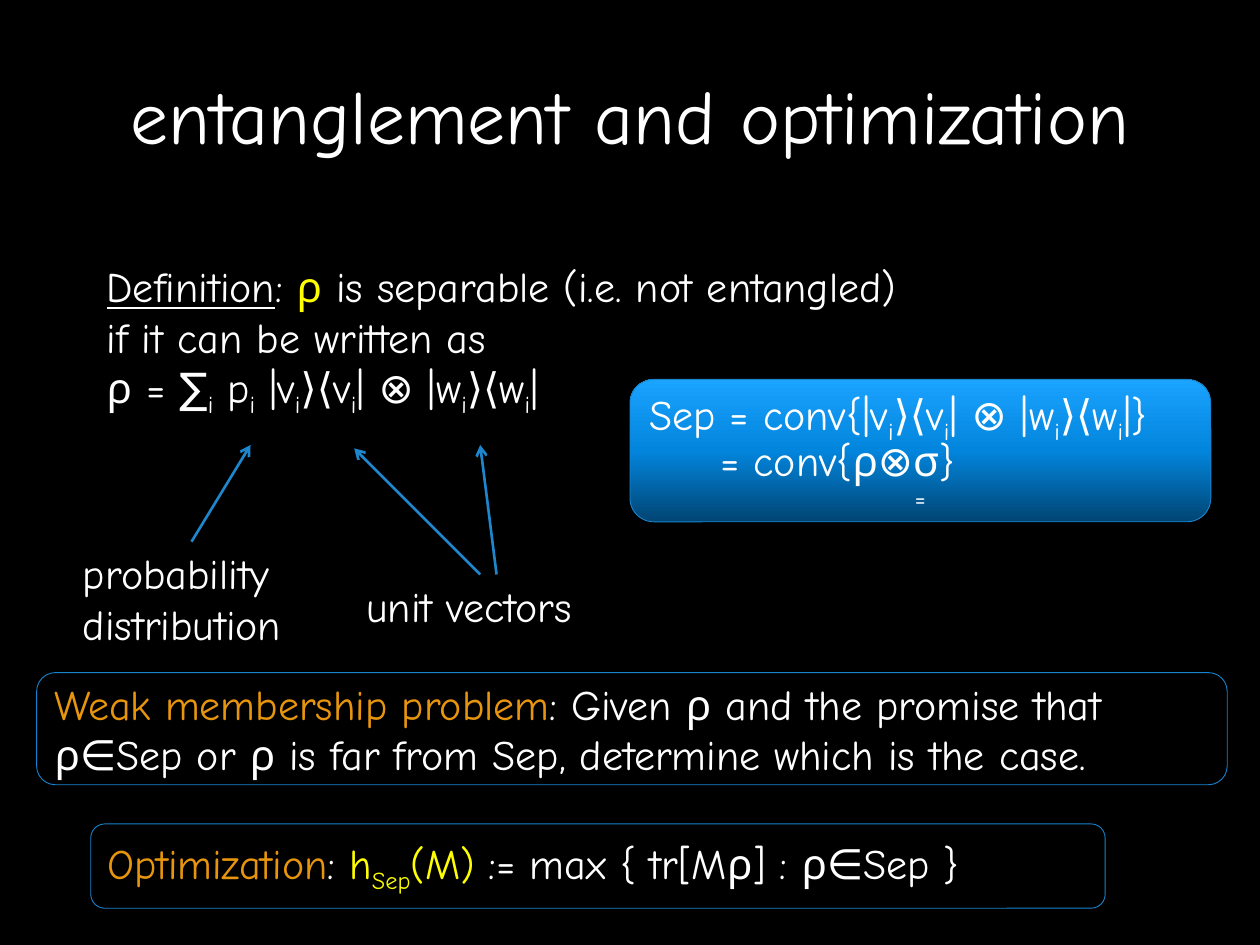
from lxml import etree
from pptx import Presentation, util as u
from pptx.dml.color import RGBColor
from pptx.enum import shapes, text
from pptx.oxml.ns import qn

THEME = {
    "font": "Comic Neue", "title": 43.2, "body": 24, "small": 14,
    "white": "FFFFFF", "yellow": "FFFF00", "orange": "E8950E",
    "background": "000000", "border": "1884CD", "arrow": "1D86CD",
    "gradient": [(0, "014573"), (50, "0285DD"), (100, "1AA3FF")],
}

# Paragraphs are lists of (words, style); ~ switches subscript on and off.
TITLE = "entanglement and optimization"
STATES = "|v~i~⟩⟨v~i~| ⊗ |w~i~⟩⟨w~i~|"
DEFINITION = [
    [("Definition", "underlined"), (": ", "white"), ("ρ", "yellow"),
     (" is separable (i.e. not entangled)", "white")],
    [("if it can be written as", "white")],
    [("ρ = ∑~i~ p~i~ " + STATES, "white")],
]
LABELS = [  # left, top, width, height in cm
    ((1.42, 10.92, 4.85, 2.31), [[("probability\ndistribution", "white")]]),
    ((7.14, 11.58, 5.08, 1.27), [[("unit vectors", "white")]]),
]
ARROWS = [  # from x, y to x, y in cm
    (3.86, 10.92, 5.05, 8.97),
    (9.68, 11.58, 7.14, 9.04),
    (10.01, 11.58, 9.68, 8.97),
]
MEMBERSHIP = [[
    ("Weak membership problem", "orange"),
    (": Given ρ and the promise that\nρ∈Sep or ρ is far from Sep, determine which is the case.", "white"),
]]
SEP = [
    [("Sep = conv{" + STATES + "}", "white")],
    [("= conv{ρ⊗σ}", "white")],
    [("=", "white")],
]
OPTIMIZATION = [[
    ("Optimization", "orange"), (": ", "white"), ("h~Sep~(M)", "yellow"),
    (" := max { tr[Mρ] : ρ∈Sep }", "white"),
]]


def color(name):
    return RGBColor.from_string(THEME[name])


def style_run(run, style, size):
    run.font.name = THEME["font"]
    run.font.size = u.Pt(size)
    run.font.underline = True if style == "underlined" else None
    run.font.color.rgb = color("white" if style == "underlined" else style)


def write(frame, paragraphs):
    for number, pieces in enumerate(paragraphs):
        paragraph = frame.paragraphs[0] if number == 0 else frame.add_paragraph()
        paragraph.alignment = text.PP_ALIGN.LEFT
        for words, style in pieces:
            for part, chunk in enumerate(words.split("~")):
                for row, line in enumerate(chunk.split("\n")):
                    if row:
                        paragraph.add_line_break()
                    if not line:
                        continue
                    run = paragraph.add_run()
                    run.text = line
                    style_run(run, style, THEME["body"])
                    if part % 2:
                        run.font._element.set("baseline", "-25000")


def add_label(slide, place, paragraphs):
    frame = slide.shapes.add_textbox(*map(u.Cm, place)).text_frame
    frame.word_wrap = False
    frame.auto_size = text.MSO_AUTO_SIZE.SHAPE_TO_FIT_TEXT
    write(frame, paragraphs)


def add_panel(slide, place, paragraphs):
    panel = slide.shapes.add_shape(shapes.MSO_SHAPE.ROUNDED_RECTANGLE, *map(u.Cm, place))
    panel.shadow.inherit = False
    panel.fill.background()
    panel.line.color.rgb = color("border")
    panel.line.width = u.Pt(0.5)
    panel.text_frame.word_wrap = True
    panel.text_frame.vertical_anchor = text.MSO_ANCHOR.MIDDLE
    write(panel.text_frame, paragraphs)
    return panel


def fill_gradient(panel):
    panel.fill.gradient()
    panel.fill.gradient_angle = 90
    stops = panel._element.spPr.find(qn("a:gradFill")).find(qn("a:gsLst"))
    for stop in list(stops):
        stops.remove(stop)
    for position, value in THEME["gradient"]:
        stop = etree.SubElement(stops, qn("a:gs"), pos=str(position * 1000))
        etree.SubElement(stop, qn("a:srgbClr"), val=value)


def fit_equations(frame):
    """Keep the three lines inside the panel, the later ones indented or centred."""
    frame.margin_top = frame.margin_bottom = 0
    _, product, equals = frame.paragraphs
    for paragraph in frame.paragraphs:
        paragraph.line_spacing = 0.9
    product._p.get_or_add_pPr().set("marL", str(u.Cm(1.43)))
    equals.alignment = text.PP_ALIGN.CENTER
    equals.runs[0].font.size = u.Pt(THEME["small"])


def add_arrow(slide, ends):
    arrow = slide.shapes.add_connector(shapes.MSO_CONNECTOR.STRAIGHT, *map(u.Cm, ends))
    arrow.line.color.rgb = color("arrow")
    arrow.line.width = u.Pt(1.5)
    etree.SubElement(arrow.line._get_or_add_ln(), qn("a:tailEnd"), type="arrow")
    etree.SubElement(arrow._element.spPr, qn("a:effectLst"))


def main():
    deck = Presentation()
    deck.slide_width, deck.slide_height = u.Cm(25.4), u.Cm(19.05)
    slide = deck.slides.add_slide(deck.slide_layouts[5])
    slide.background.fill.solid()
    slide.background.fill.fore_color.rgb = color("background")

    title = slide.shapes.title
    title.left, title.top, title.width, title.height = map(u.Cm, (1.9, 0.33, 21.6, 3.96))
    title.text_frame.text = TITLE
    title.text_frame.vertical_anchor = text.MSO_ANCHOR.MIDDLE
    title.text_frame.paragraphs[0].alignment = text.PP_ALIGN.CENTER
    style_run(title.text_frame.paragraphs[0].runs[0], "white", THEME["title"])

    add_label(slide, (1.9, 5.13, 17.83, 3.33), DEFINITION)
    for place, label in LABELS:
        add_label(slide, place, label)
    for ends in ARROWS:
        add_arrow(slide, ends)

    add_panel(slide, (0.74, 13.56, 24, 2.26), MEMBERSHIP)
    sep = add_panel(slide, (12.7, 7.65, 11.71, 2.87), SEP)
    fill_gradient(sep)
    fit_equations(sep.text_frame)
    add_panel(slide, (1.83, 16.61, 20.45, 1.7), OPTIMIZATION)

    deck.save("out.pptx")


if __name__ == "__main__":
    main()
